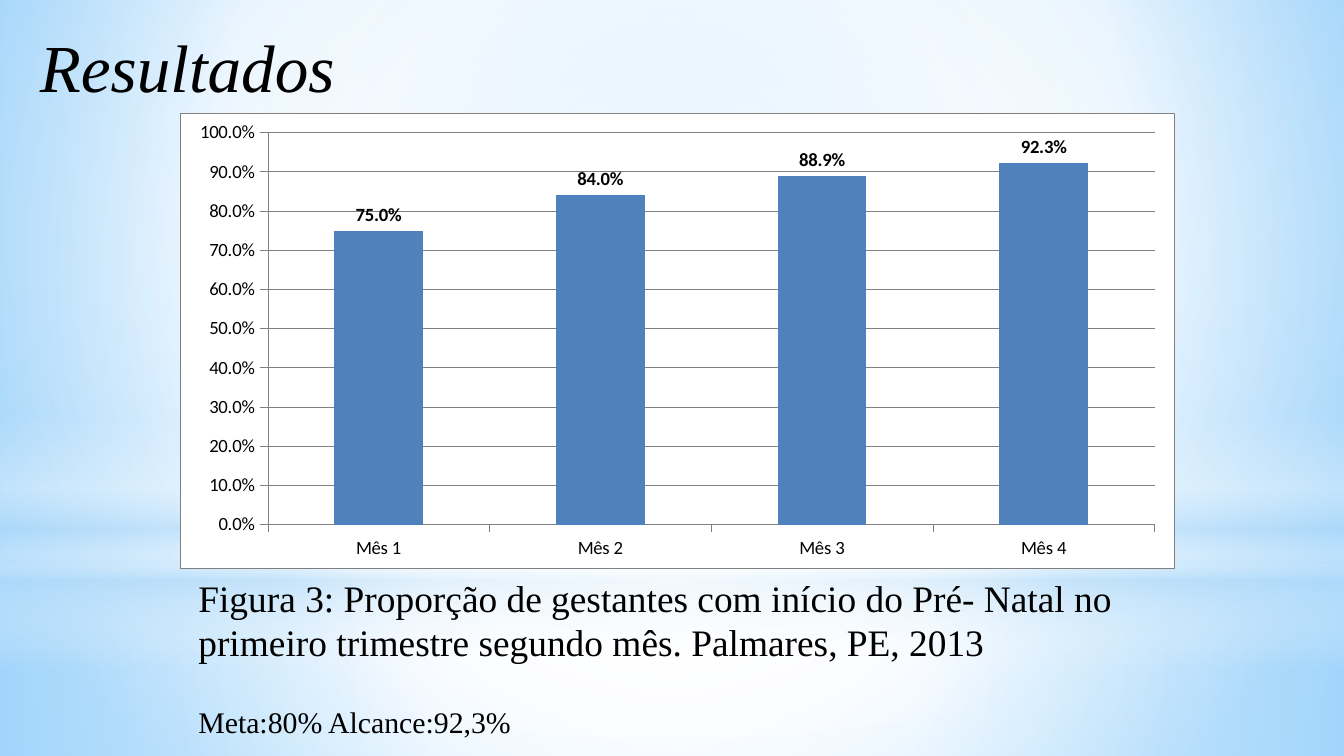
from lxml import etree
from pptx import Presentation, util as u
from pptx.chart.data import CategoryChartData
from pptx.dml.color import RGBColor
from pptx.enum import chart as ch, shapes, text
from pptx.oxml import parse_xml
from pptx.oxml.ns import nsdecls, qn

# Content
TITLE = "Resultados"
CAPTION = [
    ("Figura 3: Proporção de gestantes com início do Pré- Natal no "
     "primeiro trimestre segundo mês. Palmares, PE, 2013", 20, 0),
    ("Meta:80% Alcance:92,3%", 16, 21),  # text, size, space before
]
MONTHS = ["Mês 1", "Mês 2", "Mês 3", "Mês 4"]
SHARES = [0.75, 0.84, 0.889, 0.923]
SERIF, SANS = "Times New Roman", "Calibri"
C = {"text": "000000", "white": "FFFFFF", "pale": "B4DCFA", "sky": "9ED5FF",
     "blue": "5BB9FF", "bar": "4F81BD", "line": "808080"}

# Gradients: (position, colour, opacity) stops, then focus box or angle
CENTRE = (50, 50, 50, 50)
BACKGROUND = [(0, "sky", 100), (60, "white", 100), (100, "blue", 100)]
RECT, OVAL = shapes.MSO_SHAPE.RECTANGLE, shapes.MSO_SHAPE.OVAL
GLOWS = [  # shape, top and height in cm, stops, focus, angle
    (RECT, 10.64, 3.65,
     [(0, "white", 91), (37, "white", 76), (100, "pale", 79)], CENTRE, 0),
    (RECT, 0, 10.64,
     [(0, "white", 89), (48, "white", 62), (100, "pale", 79)], CENTRE, 0),
    (RECT, 7.85, 4.78,
     [(0, "white", 0), (29, "white", 30), (45, "pale", 40),
      (55, "white", 26), (65, "pale", 60), (100, "white", 0)], None, 90),
    (OVAL, 3.33, 10.64, [(0, "white", 100), (56, "white", 0)], CENTRE, 0),
]


def rgb(name):
    return RGBColor.from_string(C[name])


def set_gradient(fill, parent, stops, focus=None, angle=0):
    fill.gradient()
    old = parent.find(".//" + qn("a:gradFill"))
    gs = "".join(
        f'<a:gs pos="{pos * 1000}"><a:srgbClr val="{C[name]}">'
        f'<a:alpha val="{alpha * 1000}"/></a:srgbClr></a:gs>'
        for pos, name, alpha in stops)
    if focus:
        box = " ".join(f'{k}="{v * 1000}"' for k, v in zip("ltrb", focus))
        shade = f'<a:path path="circle"><a:fillToRect {box}/></a:path>'
    else:
        shade = f'<a:lin ang="{angle * 60000}" scaled="0"/>'
    old.getparent().replace(old, parse_xml(
        f'<a:gradFill {nsdecls("a")} rotWithShape="1">'
        f'<a:gsLst>{gs}</a:gsLst>{shade}</a:gradFill>'))


def style(p, size, font, italic=False):
    p.alignment = text.PP_ALIGN.LEFT
    for r in p.runs:
        r.font.size, r.font.name, r.font.italic = u.Pt(size), font, italic
        r.font.color.rgb = rgb("text")


def thin(line):
    line.color.rgb = rgb("line")
    line.width = u.Pt(0.25)


prs = Presentation()
prs.slide_width, prs.slide_height = u.Cm(25.4), u.Cm(14.29)
s = prs.slides.add_slide(prs.slide_layouts[5])

# Background and soft glows
set_gradient(s.background.fill, s.element, BACKGROUND, (20, 10, 20, 60))
for kind, top, height, stops, focus, angle in GLOWS:
    sp = s.shapes.add_shape(kind, 0, u.Cm(top), prs.slide_width, u.Cm(height))
    sp.shadow.inherit = False
    sp.line.fill.background()
    set_gradient(sp.fill, sp.element, stops, focus, angle)

# Column chart
data = CategoryChartData(number_format="0.0%")
data.categories = MONTHS
data.add_series("Series 1", SHARES)
chart = s.shapes.add_chart(
    ch.XL_CHART_TYPE.COLUMN_CLUSTERED,
    u.Cm(3.4), u.Cm(2.13), u.Cm(18.8), u.Cm(8.61), data).chart
chart.has_legend = chart.has_title = False
chart.font.size, chart.font.name = u.Pt(10), SANS
chart.font.color.rgb = rgb("text")
for axis in (chart.category_axis, chart.value_axis):
    axis.major_tick_mark = ch.XL_TICK_MARK.OUTSIDE
    thin(axis.format.line)
axis = chart.value_axis
axis.minimum_scale, axis.maximum_scale, axis.major_unit = 0, 1, 0.1
axis.tick_labels.number_format = "0.0%"
axis.tick_labels.number_format_is_linked = False
thin(axis.major_gridlines.format.line)

plot = chart.plots[0]
plot.gap_width, plot.vary_by_categories = 150, False
bars = plot.series[0]
bars.format.fill.solid()
bars.format.fill.fore_color.rgb = rgb("bar")
labels = bars.data_labels
labels.show_value = True
labels.position = ch.XL_LABEL_POSITION.OUTSIDE_END
labels.number_format, labels.number_format_is_linked = "0.0%", False
labels.font.bold, labels.font.size, labels.font.name = True, u.Pt(10), SANS
labels.font.color.rgb = rgb("text")

# White chart area with a thin border
chart.element.find(qn("c:chart")).addnext(parse_xml(
    f'<c:spPr {nsdecls("c", "a")}>'
    f'<a:solidFill><a:srgbClr val="{C["white"]}"/></a:solidFill>'
    f'<a:ln w="{u.Pt(0.25)}"><a:solidFill><a:srgbClr val="{C["line"]}"/>'
    '</a:solidFill></a:ln></c:spPr>'))

# Title, brought in front of the glows
title = s.shapes.title
title.left, title.top = u.Cm(0.5), u.Cm(0.36)
title.width, title.height = u.Cm(7.2), u.Cm(2.39)
tf = title.text_frame
tf.text = TITLE
tf.vertical_anchor = text.MSO_ANCHOR.TOP
tf.auto_size = text.MSO_AUTO_SIZE.NONE
style(tf.paragraphs[0], 36, SERIF, italic=True)
title.element.getparent().append(title.element)

# Caption
tf = s.shapes.add_textbox(
    u.Cm(3.5), u.Cm(10.74), u.Cm(18.6), u.Cm(4.95)).text_frame
tf.word_wrap = True
for i, (words, size, before) in enumerate(CAPTION):
    p = tf.add_paragraph() if i else tf.paragraphs[0]
    p.text = words
    p.space_before = u.Pt(before)
    style(p, size, SERIF)

prs.save("out.pptx")
